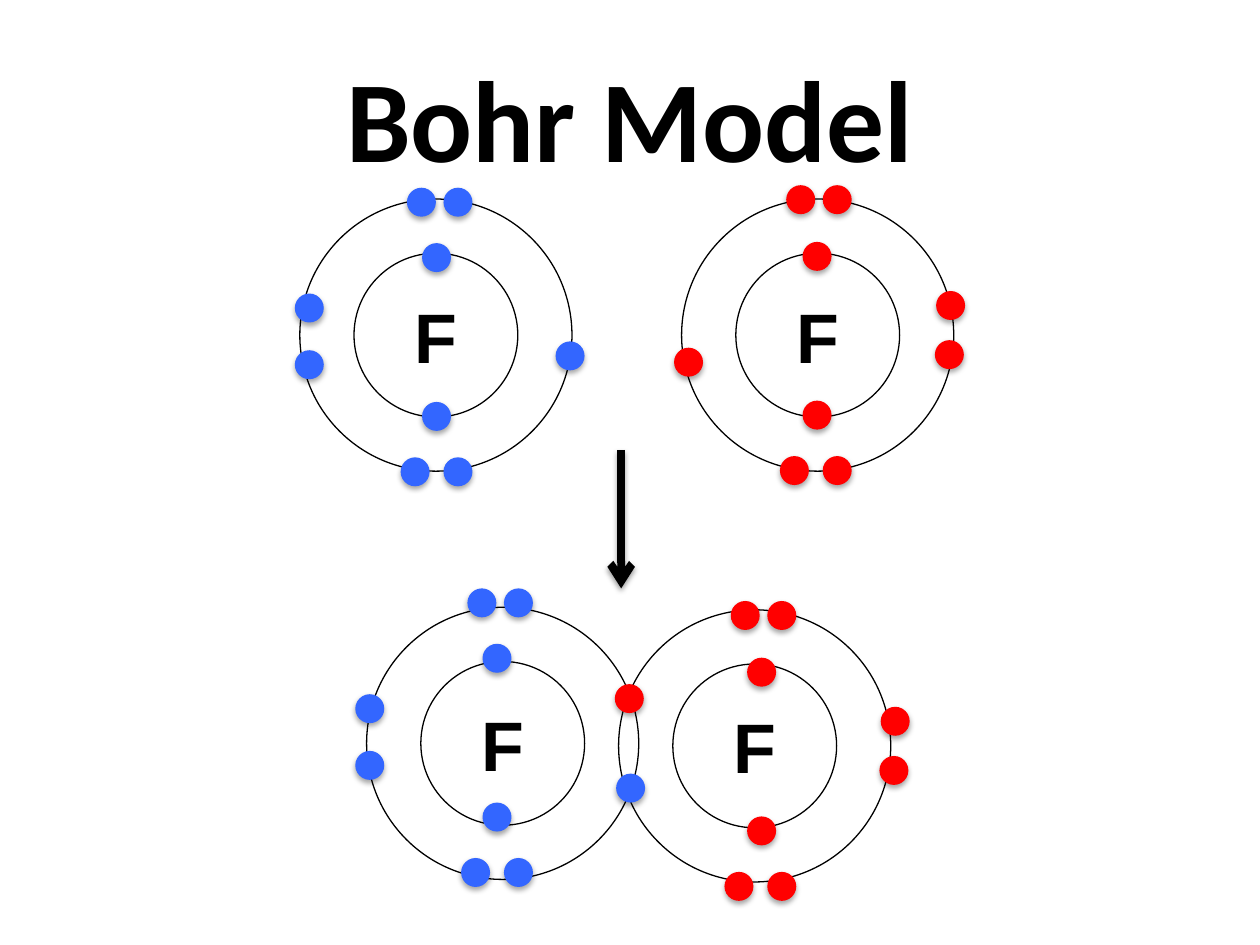
from lxml import etree
from pptx import Presentation, util as u
from pptx.dml.color import RGBColor
from pptx.enum import shapes, text
from pptx.oxml.ns import qn

# Content
TITLE = "Bohr Model"
BLACK, BLUE, RED = "000000", "3366FF", "FF0000"
RING, CORE, DOT = 2.16, 1.3, 0.23

# Electron places, measured from the corner of each electron cloud
SHELL = {
    BLUE: [(1.01, 0.44), (1.01, 1.7), (0.89, 0), (1.18, 0), (0, 0.84),
           (0, 1.29), (0.84, 2.14), (1.18, 2.14)],
    RED: [(1.02, 0.45), (1.02, 1.71), (0.89, 0), (1.18, 0), (2.08, 0.84),
          (2.07, 1.23), (0.84, 2.15), (1.18, 2.15)],
}
# Symbol and corner of the outer ring
ATOMS = [("F", 5.41, 1.58), ("F", 4.91, 4.84),
         ("F", 2.91, 4.82), ("F", 2.38, 1.58)]
# Colour, corner of the cloud, offset of the bonding electron
CLOUDS = [(BLUE, 2.34, 1.49, (2.07, 1.22)), (RED, 5.35, 1.47, (0, 1.29)),
          (BLUE, 2.82, 4.67, (2.07, 1.47)), (RED, 4.91, 4.77, (-0.03, 0.66))]

deck = Presentation()
deck.slide_width, deck.slide_height = u.Inches(10), u.Inches(7.5)
page = deck.slides.add_slide(deck.slide_layouts[6])


def tone(code):
    return RGBColor.from_string(code)


def label(shape, words, size, font):
    frame = shape.text_frame
    frame.word_wrap = True
    frame.vertical_anchor = text.MSO_ANCHOR.MIDDLE
    frame.text = words
    para = frame.paragraphs[0]
    para.alignment = text.PP_ALIGN.CENTER
    face = para.runs[0].font
    face.size, face.name, face.bold = u.Pt(size), font, True
    face.color.rgb = tone(BLACK)


def shade(shape, blur, dist, alpha):
    props = shape._element.spPr
    for old in props.findall(qn("a:effectLst")):
        props.remove(old)
    glow = etree.SubElement(etree.SubElement(props, qn("a:effectLst")),
                            qn("a:outerShdw"), blurRad=str(u.Pt(blur)),
                            dist=str(u.Pt(dist)), dir="5400000",
                            rotWithShape="0")
    ink = etree.SubElement(glow, qn("a:srgbClr"), val=BLACK)
    etree.SubElement(ink, qn("a:alpha"), val=str(alpha * 1000))


def disc(group, x, y, size, fill=None):
    oval = group.shapes.add_shape(shapes.MSO_SHAPE.OVAL, u.Inches(x),
                                  u.Inches(y), u.Inches(size), u.Inches(size))
    oval.shadow.inherit = False
    if fill:
        oval.fill.solid()
        oval.fill.fore_color.rgb = tone(fill)
        oval.line.fill.background()
        shade(oval, 3.1, 1.8, 35)
    else:
        oval.fill.background()
        oval.line.color.rgb = tone(BLACK)
        oval.line.width = u.Pt(0.75)
    return oval


# Title
head = page.shapes.add_textbox(*map(u.Inches, (0.5, 0.3, 9, 1.25)))
label(head, TITLE, 66, "Calibri")

# Atoms: core and ring share a centre
for name, x, y in ATOMS:
    atom = page.shapes.add_group_shape()
    gap = (RING - CORE) / 2
    label(disc(atom, x + gap, y + gap, CORE), name, 40, "Arial")
    disc(atom, x, y, RING)

# Reaction arrow
arrow = page.shapes.add_connector(shapes.MSO_CONNECTOR.STRAIGHT,
                                  *map(u.Inches, (4.93, 3.57, 4.93, 4.67)))
arrow.line.color.rgb = tone(BLACK)
arrow.line.width = u.Pt(4.5)
etree.SubElement(arrow.line._get_or_add_ln(), qn("a:tailEnd"), type="arrow")
shade(arrow, 3.1, 1.6, 38)

# Electrons
for hue, x, y, bond in CLOUDS:
    cloud = page.shapes.add_group_shape()
    for dx, dy in SHELL[hue] + [bond]:
        disc(cloud, x + dx, y + dy, DOT, hue)

deck.save("out.pptx")
